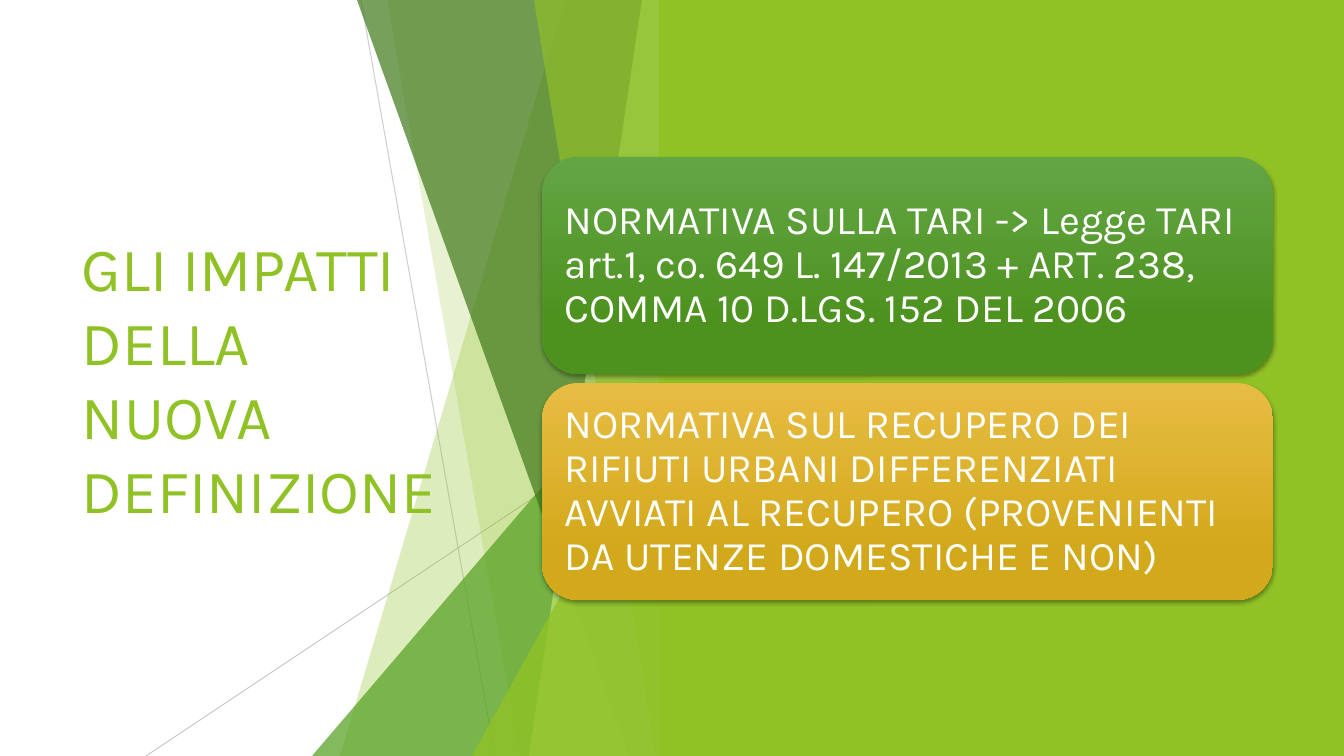
from dataclasses import dataclass

import pptx
import pptx.dml.color
import pptx.enum.shapes
import pptx.enum.text
import pptx.oxml
import pptx.oxml.ns
import pptx.shapes.autoshape
import pptx.shapes.base
import pptx.slide
import pptx.text.text
import pptx.util
from lxml import etree

RGBColor = pptx.dml.color.RGBColor
PRESET = pptx.enum.shapes.MSO_SHAPE

EMU_PER_PX = 914400 / 100.8
PAGE_WIDTH, PAGE_HEIGHT = 1344, 756
FACET_RIGHT = 671
FONT = "Karla"

WHITE = RGBColor(0xFF, 0xFF, 0xFF)
GREY = RGBColor(0xBF, 0xBF, 0xBF)
LIME = RGBColor(0x90, 0xC2, 0x26)
PALE_LIME = RGBColor(0xC0, 0xE4, 0x74)
LEAF = RGBColor(0x54, 0xA0, 0x21)
FOREST = RGBColor(0x3F, 0x78, 0x19)
CARD_GREEN_TOP = RGBColor(0x63, 0xA5, 0x45)
CARD_GREEN_END = RGBColor(0x4D, 0x92, 0x1E)
CARD_GOLD_TOP = RGBColor(0xE7, 0xBC, 0x43)
CARD_GOLD_END = RGBColor(0xD2, 0xA9, 0x1B)

CARD_SHADOW = (
    '<a:outerShdw xmlns:a="http://schemas.openxmlformats.org/drawingml/2006/main" '
    'blurRad="38100" dist="25400" dir="5400000" rotWithShape="0">'
    '<a:srgbClr val="000000"><a:alpha val="35000"/></a:srgbClr></a:outerShdw>'
)


@dataclass(frozen=True)
class Ray:
    start: tuple[int, int]
    end: tuple[int, int]
    opacity: int


@dataclass(frozen=True)
class Facet:
    top_left: int
    bottom_left: int
    color: RGBColor
    opacity: int


@dataclass(frozen=True)
class Corner:
    left: int
    top: int
    color: RGBColor
    opacity: int


@dataclass(frozen=True)
class Card:
    top: int
    gradient: tuple[RGBColor, RGBColor]
    text: str


RAYS = [
    Ray((361, 0), (495, PAGE_HEIGHT), 75),
    Ray((FACET_RIGHT, 406), (146, PAGE_HEIGHT), 80),
]
FACETS = [
    Facet(565, 340, LIME, 30),
    Facet(387, 520, LIME, 20),
    Corner(312, 336, LEAF, 72),
    Facet(357, 629, FOREST, 70),
    Facet(642, 529, PALE_LIME, 70),
    Facet(534, 656, LIME, 65),
    Corner(472, 396, LIME, 80),
]
CARDS = [
    Card(157, (CARD_GREEN_TOP, CARD_GREEN_END),
         "NORMATIVA SULLA TARI -> Legge TARI art.1, co. 649 L. 147/2013 "
         "+ ART. 238, COMMA 10 D.LGS. 152 DEL 2006"),
    Card(383, (CARD_GOLD_TOP, CARD_GOLD_END),
         "NORMATIVA SUL RECUPERO DEI RIFIUTI URBANI DIFFERENZIATI AVVIATI "
         "AL RECUPERO (PROVENIENTI DA UTENZE DOMESTICHE E NON)"),
]


def px(length: int) -> pptx.util.Emu:
    return pptx.util.Emu(round(length * EMU_PER_PX))


def set_opacity(shape: pptx.shapes.base.BaseShape, percent: int) -> None:
    for color in shape.element.iter(pptx.oxml.ns.qn("a:srgbClr")):
        etree.SubElement(color, pptx.oxml.ns.qn("a:alpha"), val=str(percent * 1000))


def paint(shape: pptx.shapes.autoshape.Shape, color: RGBColor, opacity: int = 100) -> None:
    shape.shadow.inherit = False
    shape.line.fill.background()
    shape.fill.solid()
    shape.fill.fore_color.rgb = color
    if opacity < 100:
        set_opacity(shape, opacity)


def write(frame: pptx.text.text.TextFrame, text: str, *, size: int, color: RGBColor,
          inset: tuple[int, int], line_spacing: float = 1.0) -> None:
    frame.word_wrap = True
    frame.vertical_anchor = pptx.enum.text.MSO_ANCHOR.MIDDLE
    frame.margin_left = frame.margin_right = px(inset[0])
    frame.margin_top = frame.margin_bottom = px(inset[1])
    para = frame.paragraphs[0]
    para.alignment = pptx.enum.text.PP_ALIGN.LEFT
    para.line_spacing = line_spacing
    span = para.add_run()
    span.text = text
    span.font.name = FONT
    span.font.size = pptx.util.Pt(size)
    span.font.color.rgb = color


def draw_ray(page: pptx.slide.Slide, ray: Ray) -> None:
    line = page.shapes.add_connector(
        pptx.enum.shapes.MSO_CONNECTOR.STRAIGHT, *map(px, ray.start + ray.end))
    line.line.width = pptx.util.Pt(0.75)
    line.line.color.rgb = GREY
    set_opacity(line, ray.opacity)
    etree.SubElement(line.element.spPr, pptx.oxml.ns.qn("a:effectLst"))


def draw_facet(page: pptx.slide.Slide, facet: Facet) -> None:
    builder = page.shapes.build_freeform(facet.top_left, 0, scale=EMU_PER_PX)
    builder.add_line_segments([
        (FACET_RIGHT, 0), (FACET_RIGHT, PAGE_HEIGHT), (facet.bottom_left, PAGE_HEIGHT)])
    paint(builder.convert_to_shape(), facet.color, facet.opacity)


def draw_corner(page: pptx.slide.Slide, corner: Corner) -> None:
    triangle = page.shapes.add_shape(
        PRESET.ISOSCELES_TRIANGLE, px(corner.left), px(corner.top),
        px(FACET_RIGHT - corner.left), px(PAGE_HEIGHT - corner.top))
    triangle.adjustments[0] = 1.0
    paint(triangle, corner.color, corner.opacity)


def draw_card(page: pptx.slide.Slide, card: Card) -> None:
    box = page.shapes.add_shape(
        PRESET.ROUNDED_RECTANGLE, px(542), px(card.top), px(731), px(217))
    box.line.fill.background()
    box.fill.gradient()
    box.fill.gradient_angle = 270
    for stop, position, color in zip(box.fill.gradient_stops, (0, 0.78), card.gradient):
        stop.position = position
        stop.color.rgb = color
    box.shadow.inherit = False
    effects = box.element.spPr.find(pptx.oxml.ns.qn("a:effectLst"))
    effects.append(pptx.oxml.parse_xml(CARD_SHADOW))
    write(box.text_frame, card.text, size=29, color=WHITE, inset=(12, 12), line_spacing=0.9)


def main() -> None:
    deck = pptx.Presentation()
    deck.slide_width, deck.slide_height = px(PAGE_WIDTH), px(PAGE_HEIGHT)
    page = deck.slides.add_slide(deck.slide_layouts[6])

    title = page.shapes.add_textbox(px(72), px(152), px(391), px(452))
    write(title.text_frame, "GLI IMPATTI DELLA NUOVA DEFINIZIONE",
          size=44, color=LIME, inset=(10, 5))

    for ray in RAYS:
        draw_ray(page, ray)
    for facet in FACETS:
        if isinstance(facet, Corner):
            draw_corner(page, facet)
        else:
            draw_facet(page, facet)

    panel_left = 659
    panel = page.shapes.add_shape(
        PRESET.RECTANGLE, px(panel_left), 0, px(PAGE_WIDTH - panel_left), px(PAGE_HEIGHT))
    paint(panel, LIME)

    for card in CARDS:
        draw_card(page, card)

    deck.save("out.pptx")


if __name__ == "__main__":
    main()
